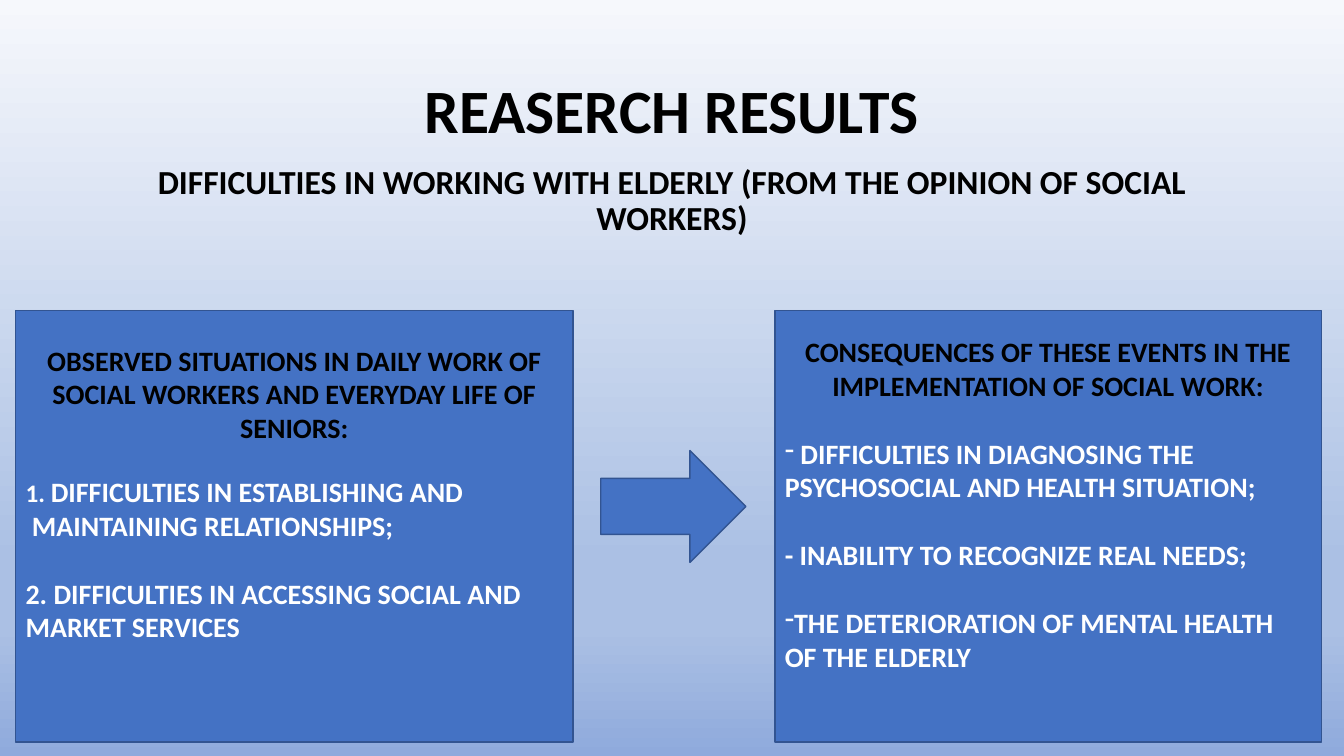
from copy import deepcopy
from dataclasses import dataclass

from lxml import etree
from pptx import Presentation
from pptx import util as u
from pptx.dml.color import RGBColor
from pptx.enum import shapes, text
from pptx.oxml.ns import qn

COLORS = {"black": "000000", "white": "FFFFFF", "blue": "4472C4", "outline": "325491"}
BACKGROUND = [(0, "F6F8FC"), (74, "ABC0E4"), (83, "ABC0E4"), (100, "8FAADC")]
FONT = "Calibri"
CENTER, LEFT = text.PP_ALIGN.CENTER, text.PP_ALIGN.LEFT
TOP, MIDDLE = text.MSO_ANCHOR.TOP, text.MSO_ANCHOR.MIDDLE


@dataclass
class Line:
    words: str
    size: float = 20
    color: str = "white"
    align: text.PP_ALIGN = LEFT
    before: float = 0
    spacing: float = 1.0
    lead: str = ""
    lead_size: float = 20
    lead_bold: bool = True
    dash: bool = False


@dataclass
class Block:
    left: float
    top: float
    width: float
    height: float
    lines: list[Line]
    anchor: text.MSO_ANCHOR = TOP
    inset: float = 3.6


HEADINGS = [
    Block(66, 28.8, 828, 104.4,
          [Line("REASERCH RESULTS", 44, "black", CENTER, spacing=0.9)], MIDDLE),
    Block(66, 114.5, 828, 372.2,
          [Line("DIFFICULTIES IN WORKING WITH ELDERLY (FROM THE OPINION OF SOCIAL WORKERS)",
                24, "black", CENTER, before=10, spacing=0.9)]),
]
PANELS = [
    Block(11.2, 221.8, 398.2, 308.2, [
        Line("OBSERVED SITUATIONS IN DAILY WORK OF SOCIAL WORKERS AND EVERYDAY LIFE OF SENIORS:",
             color="black", align=CENTER),
        Line("DIFFICULTIES IN ESTABLISHING AND", before=22, lead="1. ", lead_size=18),
        Line(" MAINTAINING RELATIONSHIPS;"),
        Line("2. DIFFICULTIES IN ACCESSING SOCIAL AND MARKET SERVICES", before=24.4),
    ], inset=23.4),
    Block(553.5, 221.8, 390.4, 308.2, [
        Line("CONSEQUENCES OF THESE EVENTS IN THE IMPLEMENTATION OF SOCIAL WORK:",
             color="black", align=CENTER),
        Line("DIFFICULTIES IN DIAGNOSING THE PSYCHOSOCIAL AND HEALTH SITUATION;",
             before=24.4, lead=" ", lead_bold=False, dash=True),
        Line("- INABILITY TO RECOGNIZE REAL NEEDS;", before=24.4),
        Line("THE DETERIORATION OF MENTAL HEALTH OF THE ELDERLY", before=24.4, dash=True),
    ], inset=17.4),
]
ARROW = Block(429.1, 321.8, 103.7, 79.9, [])


def rgb(name: str) -> RGBColor:
    return RGBColor.from_string(COLORS[name])


def paint_background(page) -> None:
    fill = page.background.fill
    fill.gradient()
    fill.gradient_angle = 270
    stops = next(page.element.iter(qn("a:gsLst")))
    pattern = deepcopy(stops[0])
    for stop in list(stops):
        stops.remove(stop)
    for percent, color in BACKGROUND:
        stop = deepcopy(pattern)
        stop.set("pos", str(percent * 1000))
        for child in list(stop):
            stop.remove(child)
        etree.SubElement(stop, qn("a:srgbClr"), val=color)
        stops.append(stop)


def add_dash(para) -> None:
    properties = para._p.get_or_add_pPr()
    properties.set("marL", "0")
    properties.set("indent", "0")
    etree.SubElement(properties, qn("a:buChar"), char="-")


def write_line(para, line: Line) -> None:
    if line.dash:
        add_dash(para)
    para.alignment = line.align
    para.line_spacing = line.spacing
    para.space_before = u.Pt(line.before)
    font = para.font
    font.name, font.size, font.bold = FONT, u.Pt(line.size), True
    font.color.rgb = rgb(line.color)
    if line.lead:
        span = para.add_run()
        span.text = line.lead
        span.font.size = u.Pt(line.lead_size)
        span.font.bold = line.lead_bold
    para.add_run().text = line.words


def write_block(box, block: Block) -> None:
    frame = box.text_frame
    frame.word_wrap = True
    frame.vertical_anchor = block.anchor
    frame.margin_top = u.Pt(block.inset)
    for index, line in enumerate(block.lines):
        write_line(frame.add_paragraph() if index else frame.paragraphs[0], line)


def bounds(block: Block) -> list[u.Length]:
    return [u.Pt(n) for n in (block.left, block.top, block.width, block.height)]


def add_heading(page, block: Block) -> None:
    write_block(page.shapes.add_textbox(*bounds(block)), block)


def add_solid(page, kind: shapes.MSO_SHAPE, block: Block) -> None:
    box = page.shapes.add_shape(kind, *bounds(block))
    box.shadow.inherit = False
    box.fill.solid()
    box.fill.fore_color.rgb = rgb("blue")
    box.line.color.rgb = rgb("outline")
    box.line.width = u.Pt(1)
    write_block(box, block)


def main() -> None:
    deck = Presentation()
    deck.slide_width, deck.slide_height = u.Pt(960), u.Pt(540)
    page = deck.slides.add_slide(deck.slide_layouts[6])
    paint_background(page)
    for heading in HEADINGS:
        add_heading(page, heading)
    for panel in PANELS:
        add_solid(page, shapes.MSO_SHAPE.RECTANGLE, panel)
    add_solid(page, shapes.MSO_SHAPE.RIGHT_ARROW, ARROW)
    deck.save("out.pptx")


if __name__ == "__main__":
    main()
